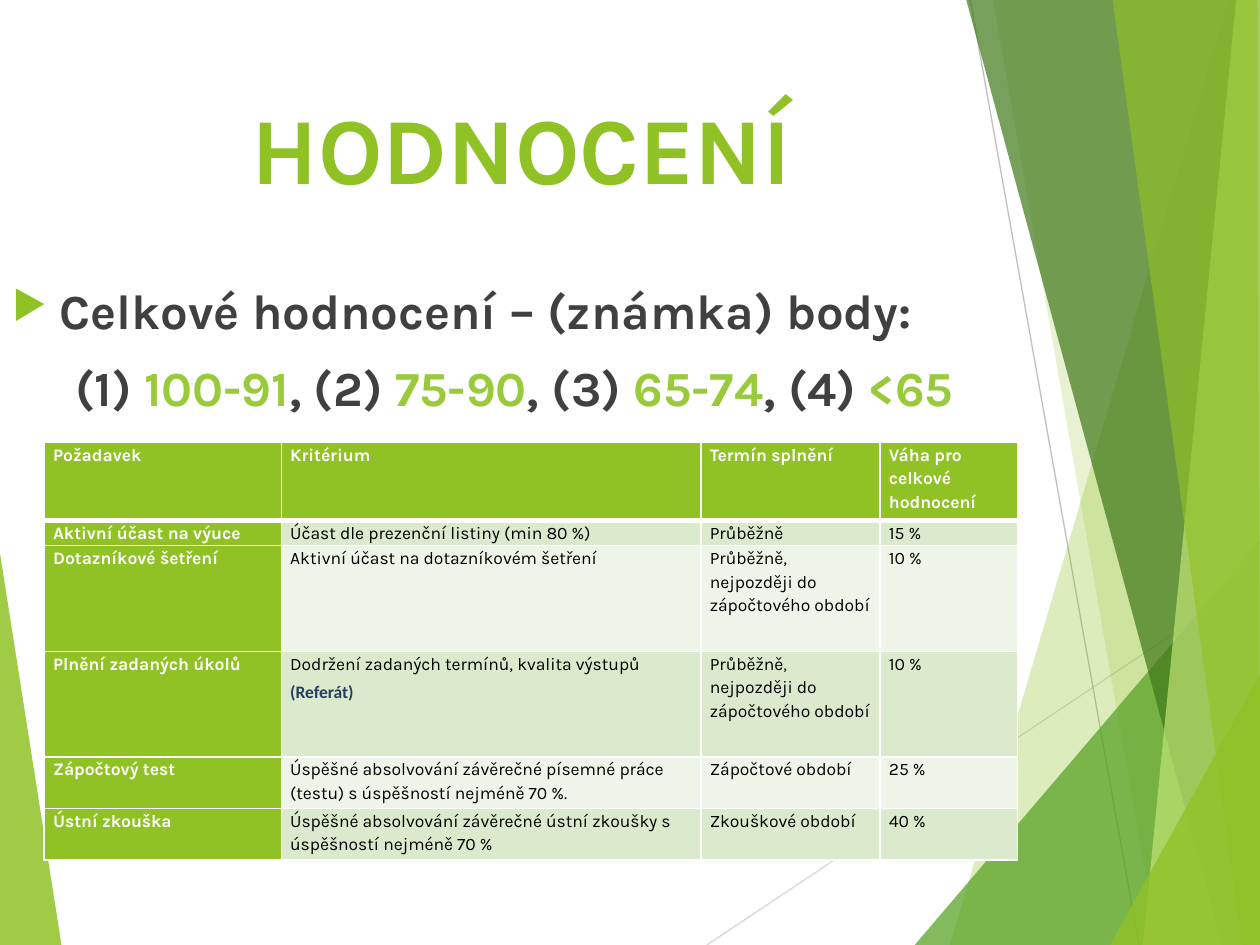
from lxml.etree import SubElement as Sub
from pptx import Presentation
from pptx.dml.color import RGBColor
from pptx.enum.shapes import MSO_CONNECTOR as Link
from pptx.enum.text import MSO_ANCHOR as Anchor, PP_ALIGN as Align
from pptx.oxml.ns import qn
from pptx.util import Cm, Pt

W, H = 25.4, 19.05
FONT = "Karla"
GREEN, LIME, DARK, WHITE = "90C226", "99CA3C", "404040", "FFFFFF"
BANDS = ["DBE9CD", "EEF4E8"]

# Rays from back to front: colour, opacity in percent, corners
RAYS = [
    (GREEN, 85, [(0, 11.15), (1.24, H), (0, H)]),
    (GREEN, 30, [(24.77, 0), (19.15, H), (W, H), (W, 0)]),
    (GREEN, 20, [(20.02, 0), (23.34, H), (W, H), (W, 0)]),
    ("54A021", 72, [(18.44, H), (W, 10.9), (W, H)]),
    ("3F7819", 70, [(19.48, 0), (24.64, H), (W, H), (W, 0)]),
    ("C0E474", 70, [(24.92, 0), (23.04, H), (W, H), (W, 0)]),
    (GREEN, 65, [(22.43, 0), (25.04, H), (W, H), (25.35, 0)]),
    (GREEN, 80, [(22.38, H), (W, 13.59), (W, H)]),
]
LINES = [
    ("D9D9D9", (14.25, H), (W, 11.61)),
    ("BFBFBF", (19.56, 0), (22.96, H)),
]
TITLE = "HODNOCENÍ"
LEAD = "Celkové hodnocení – (známka) body:"
MARKS = [("(1) ", "100-91"), (", (2) ", "75-90"),
         (", (3) ", "65-74"), (", (4) ", "<65")]
TERM = "Průběžně, nejpozději do zápočtového období"
NOTE = "(Referát)"
ROWS = [
    ("Požadavek", "Kritérium", "Termín splnění", "Váha pro celkové hodnocení"),
    ("Aktivní účast na výuce", "Účast dle prezenční listiny (min 80 %)",
     "Průběžně", "15 %"),
    ("Dotazníkové šetření", "Aktivní účast na dotazníkovém šetření",
     TERM, "10 %"),
    ("Plnění zadaných úkolů",
     "Dodržení zadaných termínů, kvalita výstupů\n" + NOTE, TERM, "10 %"),
    ("Zápočtový test",
     "Úspěšné absolvování závěrečné písemné práce (testu) "
     "s úspěšností nejméně 70 %.", "Zápočtové období", "25 %"),
    ("Ústní zkouška",
     "Úspěšné absolvování závěrečné ústní zkoušky "
     "s úspěšností nejméně 70 %", "Zkouškové období", "40 %"),
]
COLS = [4.78, 8.46, 3.61, 2.77]
HEIGHTS = [1.57, 0.51, 2.13, 2.13, 1.04, 1.04]


def rgb(code):
    return RGBColor.from_string(code)


def style(run, size, color, bold=True, font=FONT):
    run.font.size, run.font.bold, run.font.name = Pt(size), bold, font
    run.font.color.rgb = rgb(color)


def add_ray(slide, color, alpha, pts):
    pts = [(Cm(x), Cm(y)) for x, y in pts]
    form = slide.shapes.build_freeform(*pts[0], scale=1.0)
    form.add_line_segments(pts[1:], close=True)
    ray = form.convert_to_shape()
    ray.shadow.inherit = False
    ray.line.fill.background()
    ray.fill.solid()
    ray.fill.fore_color.rgb = rgb(color)
    tint = ray._element.spPr.find(qn("a:solidFill"))[0]
    Sub(tint, qn("a:alpha"), val=str(alpha * 1000))


def add_line(slide, color, start, end):
    ends = [Cm(v) for v in start + end]
    line = slide.shapes.add_connector(Link.STRAIGHT, *ends)
    line.line.color.rgb = rgb(color)
    line.line.width = Pt(0.75)
    Sub(line._element.spPr, qn("a:effectLst"))


def add_box(slide, *place):
    box = slide.shapes.add_textbox(*[Cm(v) for v in place])
    frame = box.text_frame
    frame.word_wrap = True
    frame.vertical_anchor = Anchor.TOP
    return frame


def add_bullet(para):
    props = para._p.get_or_add_pPr()
    props.set("marL", str(Cm(0.96)))
    props.set("indent", str(-Cm(0.96)))
    Sub(Sub(props, qn("a:buClr")), qn("a:srgbClr"), val=GREEN)
    Sub(props, qn("a:buSzPct"), val="80000")
    Sub(props, qn("a:buChar"), char="▶")


def add_edges(cell, widths):
    """Draw white cell borders; widths are left, right, top, bottom in points."""
    props = cell._tc.get_or_add_tcPr()
    for i, (side, width) in enumerate(zip("LRTB", widths)):
        edge = Sub(props, qn("a:ln" + side), w=str(Pt(width)))
        Sub(Sub(edge, qn("a:solidFill")), qn("a:srgbClr"), val=WHITE)
        props.insert(i, edge)


def fill_cell(cell, text, row, col):
    head = row == 0 or col == 0
    cell.margin_left = cell.margin_right = Cm(0.18)
    cell.margin_top = cell.margin_bottom = 0
    cell.vertical_anchor = Anchor.TOP
    cell.fill.solid()
    cell.fill.fore_color.rgb = rgb(GREEN if head else BANDS[(row - 1) % 2])
    add_edges(cell, (1, 1, 3 if row == 1 else 1, 3 if row == 0 else 1))
    cell.text_frame.text = text
    for para in cell.text_frame.paragraphs:
        para.line_spacing, para.space_before = 1.15, Pt(2)
        for run in para.runs:
            if run.text == NOTE:
                style(run, 10, "243F60", font="Calibri")
            else:
                style(run, 10, WHITE if head else "000000", head)


def add_grid(slide):
    place = [Cm(v) for v in (0.89, 8.92, sum(COLS), sum(HEIGHTS))]
    grid = slide.shapes.add_table(len(ROWS), len(COLS), *place).table
    grid.first_row = grid.horz_banding = False
    for col, width in zip(grid.columns, COLS):
        col.width = Cm(width)
    for r, (texts, height) in enumerate(zip(ROWS, HEIGHTS)):
        grid.rows[r].height = Cm(height)
        for c, text in enumerate(texts):
            fill_cell(grid.cell(r, c), text, r, c)


def add_texts(slide):
    para = add_box(slide, 1.7, 1.7, 17.63, 3.66).paragraphs[0]
    para.text = TITLE
    para.alignment = Align.CENTER
    style(para.runs[0], 54, GREEN)

    body = add_box(slide, 0, 5.54, 24.97, 12.5)
    lead, scale = body.paragraphs[0], body.add_paragraph()
    lead.space_before = scale.space_before = Pt(10)
    lead.text = LEAD
    style(lead.runs[0], 28, DARK)
    add_bullet(lead)
    scale._p.get_or_add_pPr().set("marL", str(Cm(1.27)))
    for mark, points in MARKS:
        for text, color in ((mark, DARK), (points, LIME)):
            run = scale.add_run()
            run.text = text
            style(run, 28, color)


def main():
    deck = Presentation()
    deck.slide_width, deck.slide_height = Cm(W), Cm(H)
    slide = deck.slides.add_slide(deck.slide_layouts[6])
    add_ray(slide, *RAYS[0])
    for line in LINES:
        add_line(slide, *line)
    for ray in RAYS[1:]:
        add_ray(slide, *ray)
    add_texts(slide)
    add_grid(slide)
    deck.save("out.pptx")


if __name__ == "__main__":
    main()
